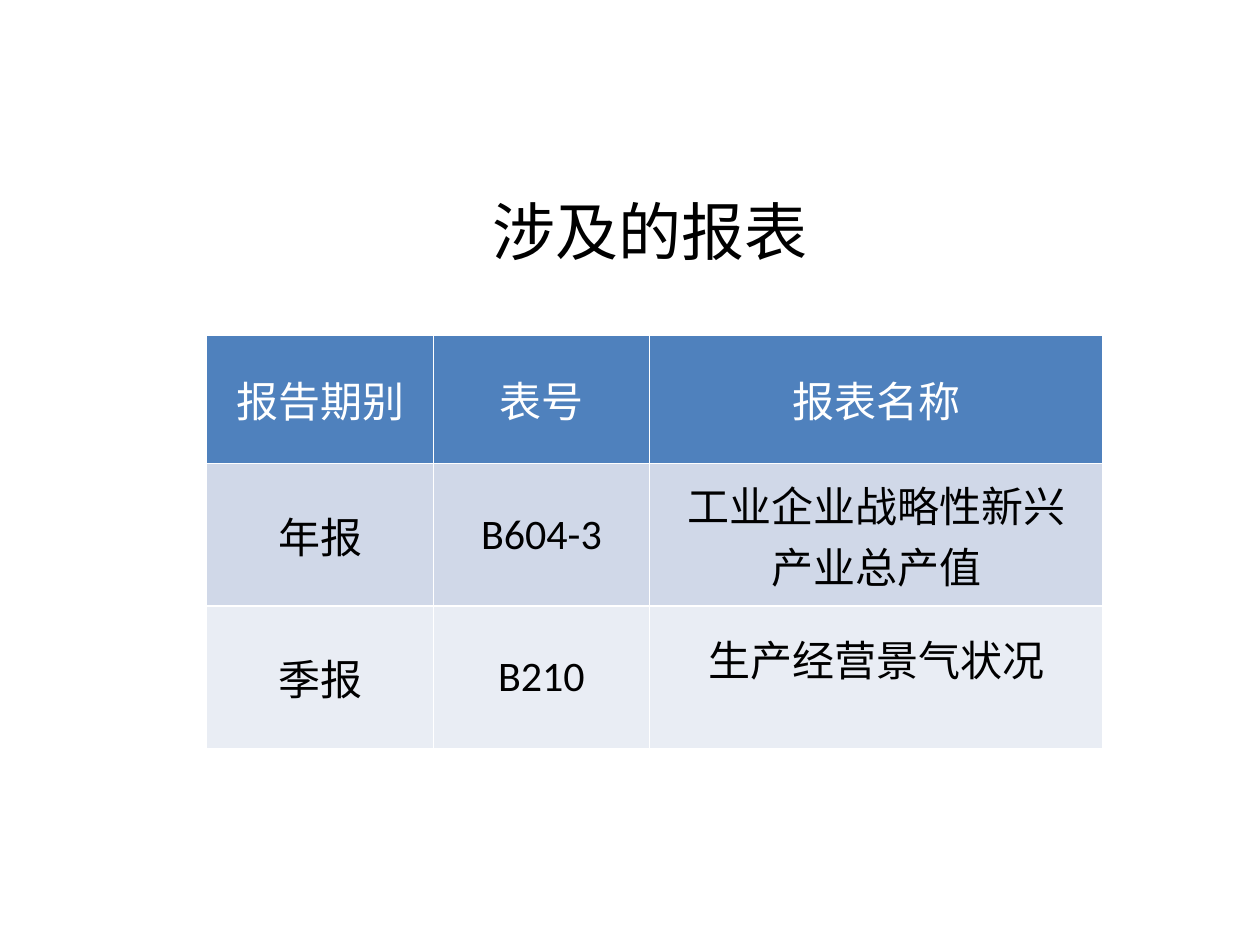
from lxml.etree import SubElement
from pptx import Presentation
from pptx.dml.color import RGBColor
from pptx.enum.text import MSO_ANCHOR, MSO_AUTO_SIZE, PP_ALIGN
from pptx.oxml.ns import qn
from pptx.util import Pt

THEME = {
    "title": {"name": "Noto Sans CJK SC", "size": Pt(36), "bold": False},
    "table": {"name": "Calibri", "size": Pt(24), "bold": False},
    "text": RGBColor.from_string("000000"),
    "header_text": RGBColor.from_string("FFFFFF"),
    "row_fills": [RGBColor.from_string(c) for c in ("4F81BD", "D0D8E8", "E9EDF4")],
    "border": "FFFFFF",
}
COLUMN_WIDTHS = [129.6, 123.5, 259]
ROW_HEIGHTS = [73.5, 81.4, 81.4]
ROWS = [
    ["报告期别", "表号", "报表名称"],
    ["年报", "B604-3", "工业企业战略性新兴\n产业总产值"],
    ["季报", "B210", "生产经营景气状况"],
]


def format_text(text_frame, font_format, color):
    for paragraph in text_frame.paragraphs:
        paragraph.alignment = PP_ALIGN.CENTER
        for run in paragraph.runs:
            for name, value in font_format.items():
                setattr(run.font, name, value)
            run.font.color.rgb = color


def add_borders(cell):
    """Draw thin lines on all four sides; they must precede the cell fill."""
    properties = cell._tc.get_or_add_tcPr()
    for side in ("lnL", "lnR", "lnT", "lnB"):
        line = SubElement(properties, qn(f"a:{side}"), w=str(Pt(1)))
        fill = SubElement(line, qn("a:solidFill"))
        SubElement(fill, qn("a:srgbClr"), val=THEME["border"])


presentation = Presentation()
presentation.slide_width, presentation.slide_height = Pt(720), Pt(540)
slide = presentation.slides.add_slide(presentation.slide_layouts[5])

# Title
title = slide.shapes.title
title_box = {"left": Pt(185.8), "top": Pt(106.6), "width": Pt(371.5), "height": Pt(51)}
for name, value in title_box.items():
    setattr(title, name, value)
title.text_frame.text = "涉及的报表"
title.text_frame.auto_size = MSO_AUTO_SIZE.SHAPE_TO_FIT_TEXT
title.text_frame.vertical_anchor = MSO_ANCHOR.TOP
format_text(title.text_frame, THEME["title"], THEME["text"])
title_properties = title.text_frame.paragraphs[0].runs[0].font._element
SubElement(title_properties, qn("a:ea"), typeface=THEME["title"]["name"])

# Table of report forms
table = slide.shapes.add_table(
    len(ROWS), len(COLUMN_WIDTHS), Pt(118.1), Pt(191.5),
    Pt(sum(COLUMN_WIDTHS)), Pt(sum(ROW_HEIGHTS)),
).table
for column, width in zip(table.columns, COLUMN_WIDTHS):
    column.width = Pt(width)
for row, height in zip(table.rows, ROW_HEIGHTS):
    row.height = Pt(height)

for row_index, labels in enumerate(ROWS):
    color = THEME["text"] if row_index else THEME["header_text"]
    for column_index, label in enumerate(labels):
        cell = table.cell(row_index, column_index)
        cell.text = label
        cell.vertical_anchor = MSO_ANCHOR.MIDDLE
        add_borders(cell)
        cell.fill.solid()
        cell.fill.fore_color.rgb = THEME["row_fills"][row_index]
        format_text(cell.text_frame, THEME["table"], color)

# The last report name has tight lines and narrow margins
last_cell = table.cell(2, 2)
last_cell.text_frame.paragraphs[0].line_spacing = Pt(13)
margins = {"margin_left": Pt(5), "margin_right": Pt(5), "margin_top": 0, "margin_bottom": 0}
for name, value in margins.items():
    setattr(last_cell, name, value)

presentation.save("out.pptx")
